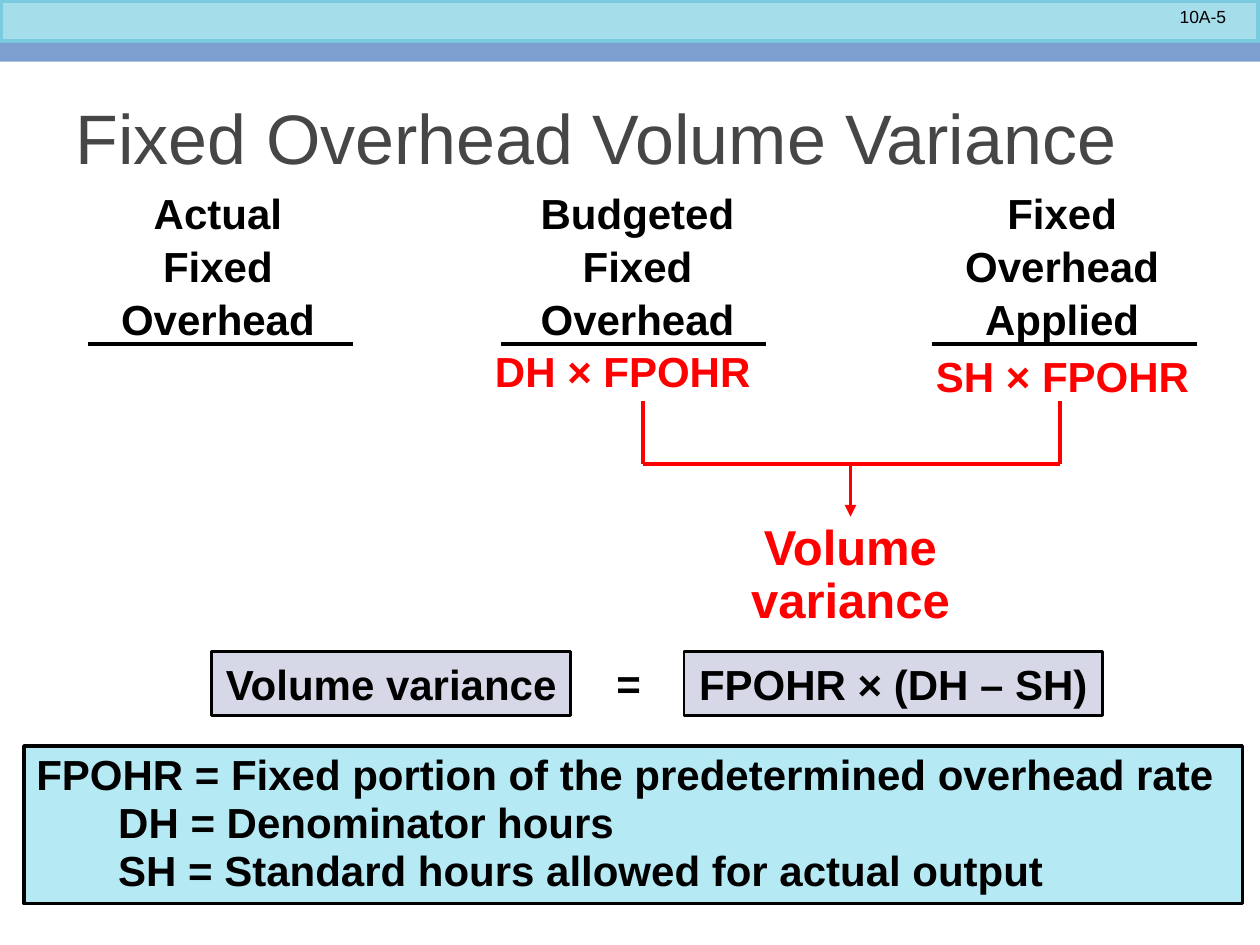
from lxml import etree
from pptx import Presentation
from pptx.dml.color import RGBColor
from pptx.enum.shapes import MSO_CONNECTOR, MSO_SHAPE
from pptx.enum.text import MSO_ANCHOR, MSO_AUTO_SIZE, PP_ALIGN
from pptx.oxml.ns import qn
from pptx.util import Inches, Pt

LEFT, CENTER, RIGHT = PP_ALIGN.LEFT, PP_ALIGN.CENTER, PP_ALIGN.RIGHT
MIDDLE, TOP = MSO_ANCHOR.MIDDLE, MSO_ANCHOR.TOP
RECTANGLE, STRAIGHT = MSO_SHAPE.RECTANGLE, MSO_CONNECTOR.STRAIGHT

BLACK = RGBColor(0x00, 0x00, 0x00)
RED = RGBColor(0xFF, 0x00, 0x00)
GRAY = RGBColor(0x46, 0x46, 0x46)
AQUA = RGBColor(0xA6, 0xDD, 0xEA)
TEAL = RGBColor(0x7A, 0xCB, 0xE0)
BLUE = RGBColor(0x7D, 0xA0, 0xD0)
LAVENDER = RGBColor(0xD7, 0xD8, 0xE7)
PALE_AQUA = RGBColor(0xB5, 0xE9, 0xF4)

FONT = "Arial"
TITLE = "Fixed Overhead Volume Variance"
PAGE_NUMBER = "10A-5"
BARS = [
    ((0, 0, 10, 0.34), AQUA, TEAL, 4),
    ((0, 0.34, 10, 0.15), BLUE, None, 0),
]
HEADING_TOP, RULE_Y, RULE_WIDTH = 1.42, 2.73, 2.1
COLUMNS = [
    (0.85, 0.7, ["Actual", "Fixed", "Overhead"]),
    (4.18, 3.98, ["Budgeted", "Fixed", "Overhead"]),
    (7.55, 7.4, ["Fixed", "Overhead", "Applied"]),
]
FORMULAS = [
    ((3.83, 2.69, 2.39, 0.51), "DH × FPOHR"),
    ((7.33, 2.73, 2.5, 0.5), "SH × FPOHR"),
]
RESULT = ["Volume", "variance"]
EQUATION_TOP, EQUATION_HEIGHT = 5.17, 0.51
EQUATION = [
    (1.68, 2.85, "Volume variance", LAVENDER),
    (4.79, 0.4, "=", None),
    (5.43, 3.32, "FPOHR × (DH – SH)", LAVENDER),
]
LEGEND = [
    "FPOHR = Fixed portion of the predetermined overhead rate",
    "DH = Denominator hours",
    "SH = Standard hours allowed for actual output",
]
LEGEND_INDENT = 0.65
DH_X, SH_X, ARROW_X = 5.1, 8.41, 6.75
BRACKET_TOP, BRACKET_Y, ARROW_END = 3.18, 3.68, 4.1
BRACKET = [
    ((DH_X, BRACKET_TOP), (DH_X, BRACKET_Y)),
    ((DH_X, BRACKET_Y), (SH_X, BRACKET_Y)),
    ((SH_X, BRACKET_Y), (SH_X, BRACKET_TOP)),
]


def write(shape, lines, size=24, color=BLACK, bold=True, align=CENTER,
          anchor=TOP, wrap=True, spacing=1.0):
    frame = shape.text_frame
    frame_format = {"word_wrap": wrap, "auto_size": MSO_AUTO_SIZE.NONE,
                    "vertical_anchor": anchor}
    for name, value in frame_format.items():
        setattr(frame, name, value)
    for index, line in enumerate(lines):
        para = frame.add_paragraph() if index else frame.paragraphs[0]
        para.alignment, para.line_spacing = align, spacing
        span = para.add_run()
        span.text = line
        font_format = {"name": FONT, "size": Pt(size), "bold": bold}
        for name, value in font_format.items():
            setattr(span.font, name, value)
        span.font.color.rgb = color


def add_text(page, place, lines, **style):
    box = page.shapes.add_textbox(*map(Inches, place))
    write(box, lines, **style)
    return box


def add_box(page, place, fill, outline=None, width=0):
    box = page.shapes.add_shape(RECTANGLE, *map(Inches, place))
    box.shadow.inherit = False
    box.fill.solid()
    box.fill.fore_color.rgb = fill
    if outline is None:
        box.line.fill.background()
    else:
        box.line.color.rgb = outline
        box.line.width = Pt(width)
    return box


def add_line(page, start, end, color, width):
    line = page.shapes.add_connector(STRAIGHT, *map(Inches, (*start, *end)))
    line.line.color.rgb = color
    line.line.width = Pt(width)
    etree.SubElement(line._element.spPr, qn("a:effectLst"))
    return line


def main():
    deck = Presentation()
    deck.slide_width, deck.slide_height = Inches(10), Inches(7.5)
    page = deck.slides.add_slide(deck.slide_layouts[5])

    title = page.shapes.title
    title_place = {"left": 0.5, "top": 0.5, "width": 9, "height": 1.17}
    for name, value in title_place.items():
        setattr(title, name, Inches(value))
    write(title, [TITLE], size=40, color=GRAY, bold=False, align=LEFT, anchor=MIDDLE)

    for bar in BARS:
        add_box(page, *bar)
    add_text(page, (8.5, 0, 1.33, 0.27), [PAGE_NUMBER], size=10, bold=False, align=RIGHT)

    for left, rule_left, heading in COLUMNS:
        add_text(page, (left, HEADING_TOP, 1.76, 1.31), heading, wrap=False, spacing=1.05)
        add_line(page, (rule_left, RULE_Y), (rule_left + RULE_WIDTH, RULE_Y), BLACK, 2)

    for place, formula in FORMULAS:
        add_text(page, place, [formula], color=RED, align=LEFT, wrap=False)

    result = add_text(page, (5.67, ARROW_END, 2.16, 0.94), RESULT,
                      size=28, color=RED, spacing=0.9)
    for start, end in BRACKET:
        add_line(page, start, end, RED, 2.25)
    arrow = add_line(page, (ARROW_X, BRACKET_Y), (ARROW_X, ARROW_END), RED, 2.25)
    arrow.end_connect(result, 0)
    etree.SubElement(arrow.line._get_or_add_ln(), qn("a:tailEnd"), type="triangle")

    for left, width, text, fill in EQUATION:
        place = (left, EQUATION_TOP, width, EQUATION_HEIGHT)
        if fill is None:
            add_text(page, place, [text], wrap=False)
        else:
            write(add_box(page, place, fill, BLACK, 1.5), [text], anchor=MIDDLE, wrap=False)

    legend = add_box(page, (0.19, 5.92, 9.67, 1.25), PALE_AQUA, BLACK, 2)
    write(legend, LEGEND, align=LEFT, spacing=0.95)
    for para in legend.text_frame.paragraphs[1:]:
        para._p.get_or_add_pPr().set("marL", str(Inches(LEGEND_INDENT)))

    deck.save("out.pptx")


if __name__ == "__main__":
    main()
